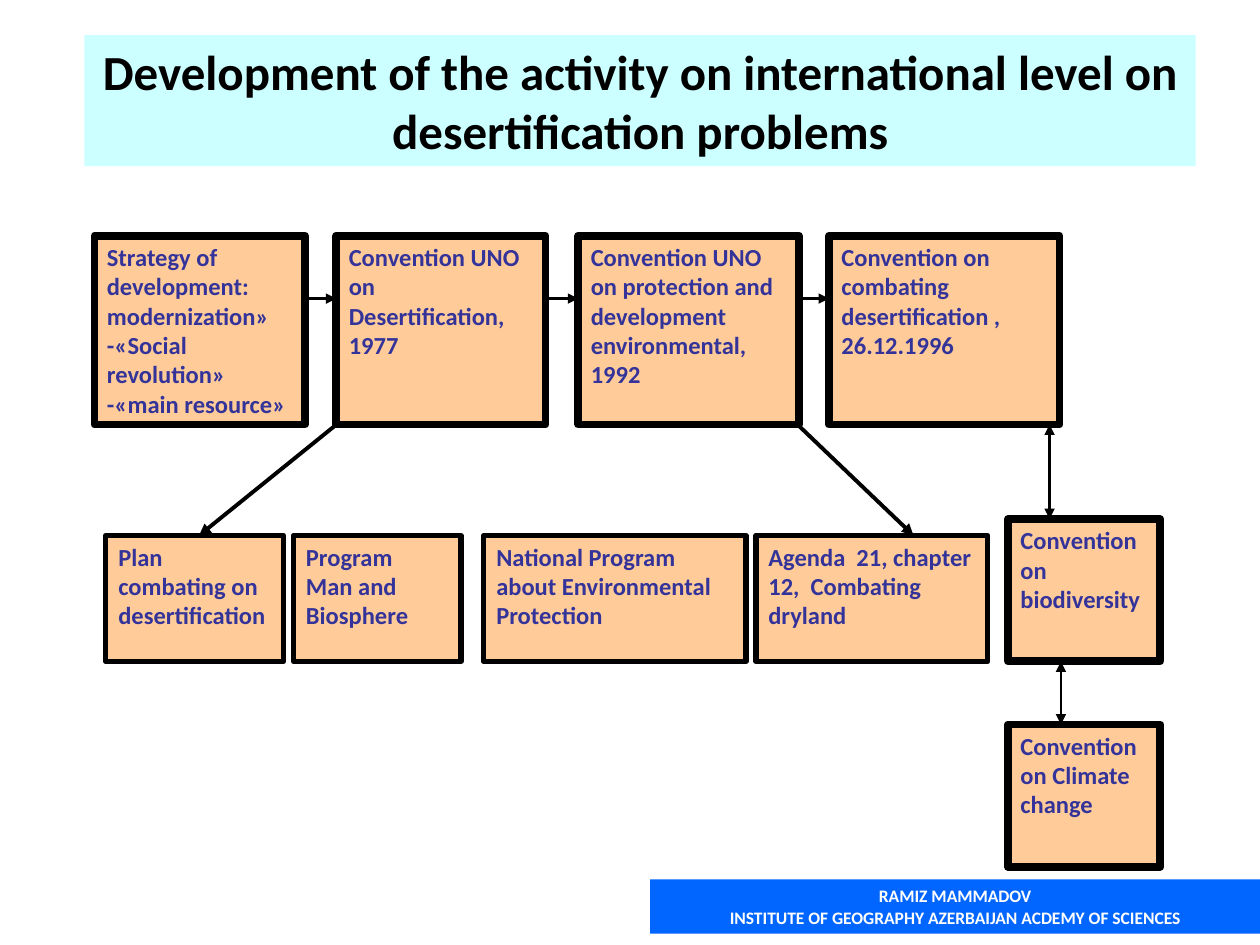
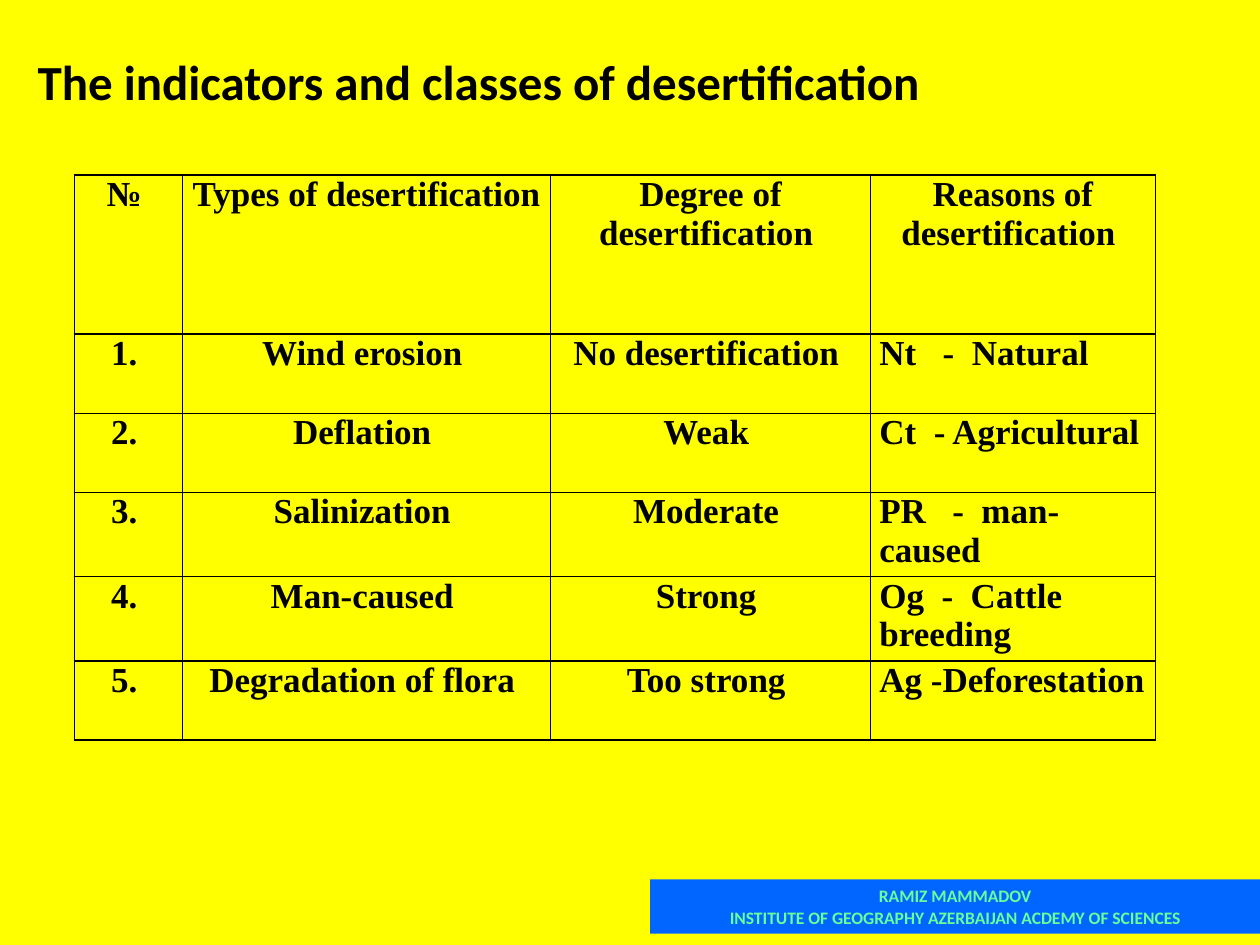
"""Build two slides on desertification: a convention flow chart and an indicator table."""
import dataclasses

import lxml.etree
import pptx
import pptx.dml.color
import pptx.enum.shapes
import pptx.enum.text
import pptx.oxml.ns
import pptx.util

Inches = pptx.util.Inches
Pt = pptx.util.Pt
qn = pptx.oxml.ns.qn
LEFT = pptx.enum.text.PP_ALIGN.LEFT
CENTER = pptx.enum.text.PP_ALIGN.CENTER
TOP = pptx.enum.text.MSO_ANCHOR.TOP
MIDDLE = pptx.enum.text.MSO_ANCHOR.MIDDLE


@dataclasses.dataclass(frozen=True)
class Theme:
    white: str = "FFFFFF"
    yellow: str = "FFFF00"
    black: str = "000000"
    peach: str = "FFCC99"
    indigo: str = "333399"
    cyan: str = "CCFFFF"
    blue: str = "0066FF"
    mint: str = "66FF99"
    sans: str = "Calibri"
    serif: str = "Times New Roman"
    title: int = 28
    body: int = 14
    table: int = 20
    footer: int = 10
    thick: float = 4.5
    medium: float = 3
    diagonal: float = 2.25
    thin: float = 1.5


def rgb(color):
    return pptx.dml.color.RGBColor.from_string(color)


class Deck:
    def __init__(self, theme):
        self.theme = theme
        self.prs = pptx.Presentation()
        self.prs.slide_width = Inches(10)
        self.prs.slide_height = Inches(7.5)
        self.s = None

    def slide(self, color):
        self.s = self.prs.slides.add_slide(self.prs.slide_layouts[6])
        fill = self.s.background.fill
        fill.solid()
        fill.fore_color.rgb = rgb(color)

    def set_text(self, tf, text, size, color, font=None, align=LEFT):
        tf.word_wrap = True
        for i, line in enumerate(text.split("\n")):
            p = tf.paragraphs[0] if i == 0 else tf.add_paragraph()
            p.alignment = align
            r = p.add_run()
            r.text = line
            style = {"name": font or self.theme.sans, "size": Pt(size), "bold": True}
            for name, value in style.items():
                setattr(r.font, name, value)
            r.font.color.rgb = rgb(color)

    def rect(self, at, fill, text, size, color, line=0, align=LEFT, anchor=TOP):
        kind = pptx.enum.shapes.MSO_SHAPE.RECTANGLE
        sp = self.s.shapes.add_shape(kind, *map(Inches, at))
        sp.shadow.inherit = False
        sp.fill.solid()
        sp.fill.fore_color.rgb = rgb(fill)
        if line:
            sp.line.color.rgb = rgb(self.theme.black)
            sp.line.width = Pt(line)
        else:
            sp.line.fill.background()
        sp.text_frame.vertical_anchor = anchor
        self.set_text(sp.text_frame, text, size, color, align=align)

    def box(self, at, text, line):
        t = self.theme
        self.rect(at, t.peach, text, t.body, t.indigo, line)

    def arrow(self, start, end, width, ends=("tailEnd",)):
        kind = pptx.enum.shapes.MSO_CONNECTOR.STRAIGHT
        sp = self.s.shapes.add_connector(kind, *map(Inches, start + end))
        sp.line.color.rgb = rgb(self.theme.black)
        sp.line.width = Pt(width)
        ln = sp.line._get_or_add_ln()
        for name in ends:
            lxml.etree.SubElement(ln, qn(f"a:{name}"), type="triangle")
        lxml.etree.SubElement(ln.getparent(), qn("a:effectLst"))

    def title(self, at, text):
        sp = self.s.shapes.add_textbox(*map(Inches, at))
        self.set_text(sp.text_frame, text, self.theme.title, self.theme.black)

    def banner(self, at, text):
        t = self.theme
        self.rect(at, t.cyan, text, t.title, t.black, align=CENTER)

    def footer(self, color):
        text = "RAMIZ MAMMADOV\nINSTITUTE OF GEOGRAPHY AZERBAIJAN ACDEMY OF SCIENCES"
        self.rect((5.16, 6.98, 4.84, 0.43), self.theme.blue, text,
                  self.theme.footer, color, align=CENTER, anchor=MIDDLE)

    def border(self, cell):
        tcPr = cell._tc.get_or_add_tcPr()
        for i, side in enumerate(("lnL", "lnR", "lnT", "lnB")):
            ln = lxml.etree.Element(qn(f"a:{side}"), w=str(int(Pt(1))))
            fill = lxml.etree.SubElement(ln, qn("a:solidFill"))
            lxml.etree.SubElement(fill, qn("a:srgbClr"), val=self.theme.black)
            tcPr.insert(i, ln)

    def table(self, left, top, widths, heights, rows):
        t = self.theme
        frame = self.s.shapes.add_table(
            len(rows), len(widths), Inches(left), Inches(top),
            Inches(sum(widths)), Inches(sum(heights)))
        table = frame.table
        table.first_row = table.horz_banding = False
        for column, width in zip(table.columns, widths):
            column.width = Inches(width)
        margins = {"margin_left": 0.07, "margin_right": 0.07,
                   "margin_top": 0, "margin_bottom": 0}
        for i, (row, height) in enumerate(zip(rows, heights)):
            table.rows[i].height = Inches(height)
            for j, text in enumerate(row):
                cell = table.cell(i, j)
                for name, value in margins.items():
                    setattr(cell, name, Inches(value))
                is_reason = i > 0 and j == len(row) - 1
                self.set_text(cell.text_frame, text, t.table, t.black, t.serif,
                              LEFT if is_reason else CENTER)
                cell.fill.background()
                self.border(cell)


def conventions(deck):
    t = deck.theme
    deck.slide(t.white)
    top, bottom, programs_top = 1.87, 3.37, 4.25
    stages = [
        (0.75, 1.67, "Strategy of development:\nmodernization»\n"
                     "-«Social revolution»\n-«main resource»"),
        (2.67, 1.66, "Convention UNO on Desertification,\n1977"),
        (4.59, 1.75, "Convention UNO on protection and development environmental, 1992"),
        (6.58, 1.83, "Convention on combating desertification , 26.12.1996"),
    ]
    programs = [
        (0.84, 1.41, "Plan combating on desertification"),
        (2.33, 1.33, "Program   Man and Biosphere"),
        (3.84, 2.08, "National Program about Environmental Protection"),
        (6, 1.84, "Agenda  21, chapter 12,  Combating dryland"),
    ]
    for left, width, text in stages:
        deck.box((left, top, width, bottom - top), text, t.thick)
    for left, width, text in programs:
        deck.box((left, programs_top, width, 1), text, t.medium)
    for y, text in ((4.12, "Convention on biodiversity"),
                    (5.75, "Convention on Climate change")):
        deck.box((8, y, 1.21, 1.13), text, t.thick)

    for (left, width, _), (target, _, _) in zip(stages, stages[1:]):
        deck.arrow((left + width, 2.37), (target, 2.37), t.thin)
    for start, end in ((2.67, 1.58), (6.33, 7.25)):
        deck.arrow((start, bottom), (end, programs_top), t.diagonal)
    for x, start, end in ((8.33, bottom, 4.12), (8.42, 5.25, 5.75)):
        deck.arrow((x, start), (x, end), t.thin, ("headEnd", "tailEnd"))

    deck.banner((0.67, 0.28, 8.82, 1.04),
                "Development of the activity on international level on "
                "desertification problems")
    deck.footer(t.white)


def indicators(deck):
    deck.slide(deck.theme.yellow)
    deck.footer(deck.theme.mint)
    deck.title((0.2, 0.36, 9.21, 0.57), "The indicators and classes of desertification")
    header = ["№ ", "Types of desertification ", "Degree of desertification ",
              "Reasons of desertification "]
    classes = [
        ("Wind erosion ", "No desertification ", "Nt   -  Natural"),
        ("Deflation ", "Weak ", "Ct  - Agricultural"),
        ("Salinization ", "Moderate ", "PR   -  man-caused"),
        ("Man-caused ", "Strong ", "Og  -  Cattle breeding"),
        ("Degradation of flora ", "Too strong ", "Ag -Deforestation"),
    ]
    rows = [header] + [(f"{n}. ", *row) for n, row in enumerate(classes, 1)]
    deck.table(0.59, 1.39, [0.86, 2.92, 2.54, 2.26], [1.26] + [0.63] * len(classes), rows)


def main():
    deck = Deck(Theme())
    conventions(deck)
    indicators(deck)
    deck.prs.save("out.pptx")


if __name__ == "__main__":
    main()
